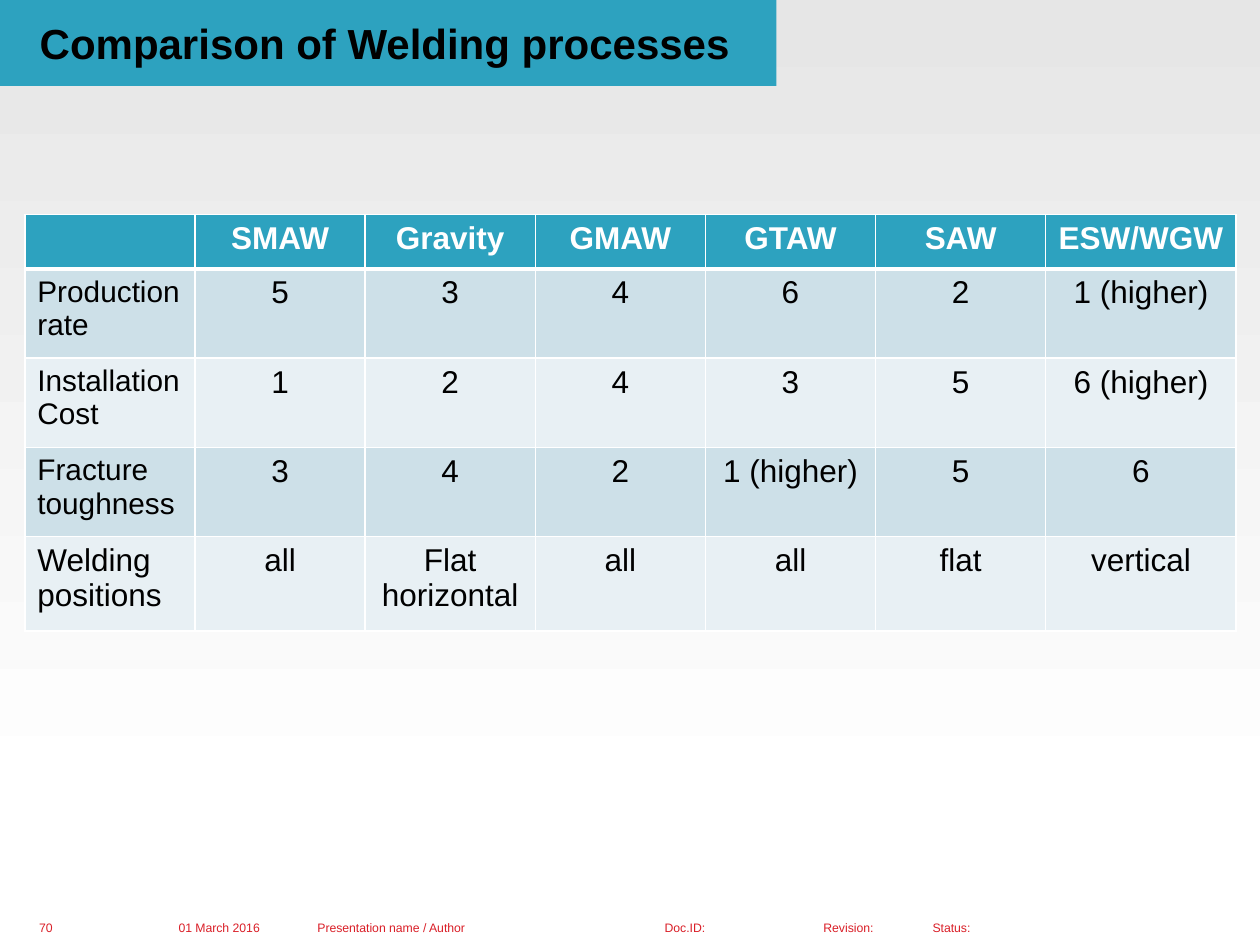
import pptx
import pptx.dml.color
import pptx.enum.text
import pptx.oxml
import pptx.oxml.ns
import pptx.util
from pptx.util import Cm

COLORS = {
    "teal": "2DA2BF",
    "band_dark": "CDE0E8",
    "band_light": "E8F0F4",
    "red": "DA1F28",
    "black": "000000",
    "white": "FFFFFF",
    "gray": "E6E6E6",
}
ALIGN = pptx.enum.text.PP_ALIGN
ANCHOR = pptx.enum.text.MSO_ANCHOR


def rgb(name):
    return pptx.dml.color.RGBColor.from_string(COLORS[name])


def format_text(text_frame, size, color, bold=False, align=ALIGN.LEFT):
    for paragraph in text_frame.paragraphs:
        paragraph.alignment = align
        for run in paragraph.runs:
            run.font.name = "Arial"
            run.font.size = pptx.util.Pt(size)
            run.font.bold = bold
            run.font.color.rgb = rgb(color)


presentation = pptx.Presentation()
presentation.slide_width = Cm(25.4)
presentation.slide_height = Cm(19.05)
slide = presentation.slides.add_slide(presentation.slide_layouts[5])

# Background gradient, gray at the top
background = slide.background.fill
background.gradient()
background.gradient_angle = 270
for stop, color, position in zip(background.gradient_stops, ("gray", "white"), (0, 0.85)):
    stop.color.rgb = rgb(color)
    stop.position = position

# Title on a teal bar
title = slide.shapes.title
title.left, title.top, title.width, title.height = Cm(0), Cm(0), Cm(15.65), Cm(1.73)
title.fill.solid()
title.fill.fore_color.rgb = rgb("teal")
title_frame = title.text_frame
title_frame.text = "Comparison of Welding processes"
title_frame.word_wrap = False
title_frame.auto_size = pptx.enum.text.MSO_AUTO_SIZE.NONE
title_frame.vertical_anchor = ANCHOR.MIDDLE
title_frame.margin_left = title_frame.margin_right = Cm(0.8)
title_frame.margin_top = title_frame.margin_bottom = Cm(0.35)
format_text(title_frame, 24, "black", bold=True)

# Comparison table
rows = [
    ["", "SMAW", "Gravity", "GMAW", "GTAW", "SAW", "ESW/WGW"],
    ["Production rate", "5", "3", "4", "6", "2", "1 (higher)"],
    ["Installation Cost", "1", "2", "4", "3", "5", "6 (higher)"],
    ["Fracture toughness", "3", "4", "2", "1 (higher)", "5", "6"],
    ["Welding positions", "all", "Flat\nhorizontal", "all", "all", "flat", "vertical"],
]
column_widths = [3.43] * 6 + [3.84]
row_heights = [1.1, 1.8, 1.8, 1.8, 1.9]
table = slide.shapes.add_table(
    len(rows), len(column_widths), Cm(0.5), Cm(4.32),
    Cm(sum(column_widths)), Cm(sum(row_heights))).table
for column, width in zip(table.columns, column_widths):
    column.width = Cm(width)
for row, height in zip(table.rows, row_heights):
    row.height = Cm(height)

for row_index, texts in enumerate(rows):
    header = row_index == 0
    fill = "teal" if header else ("band_light", "band_dark")[row_index % 2]
    for column_index, text in enumerate(texts):
        cell = table.cell(row_index, column_index)
        cell.fill.solid()
        cell.fill.fore_color.rgb = rgb(fill)
        cell.text_frame.text = text
        label = column_index == 0
        size = 17 if label and row_index < 4 else 18
        format_text(cell.text_frame, size, "white" if header else "black", header,
                    ALIGN.LEFT if label else ALIGN.CENTER)
        # White borders, thicker below the header
        properties = cell._tc.get_or_add_tcPr()
        for order, side in enumerate("LRTB"):
            thick = (row_index, side) in ((0, "B"), (1, "T"))
            properties.insert(order, pptx.oxml.parse_xml(
                f'<a:ln{side} {pptx.oxml.ns.nsdecls("a")} w="{pptx.util.Pt(3 if thick else 1)}">'
                f'<a:solidFill><a:srgbClr val="{COLORS["white"]}"/></a:solidFill></a:ln{side}>'))

# Footer line, each box wide enough for one line
footers = [
    ("70", 0.69, 1),
    ("01 March 2016", 3.5, 2.8),
    ("Presentation name / Author", 6.3, 6.8),
    ("Doc.ID:", 13.3, 1.3),
    ("Revision:", 16.5, 1.5),
    ("Status:", 18.7, 1.3),
]
for text, left, width in footers:
    footer = slide.shapes.add_textbox(Cm(left), Cm(18.52), Cm(width), Cm(0.4))
    footer_frame = footer.text_frame
    footer_frame.text = text
    footer_frame.word_wrap = True
    footer_frame.vertical_anchor = ANCHOR.MIDDLE
    footer_frame.margin_left = footer_frame.margin_right = footer_frame.margin_top = Cm(0.1)
    footer_frame.margin_bottom = Cm(0.15)
    format_text(footer_frame, 7, "red")

presentation.save("out.pptx")
